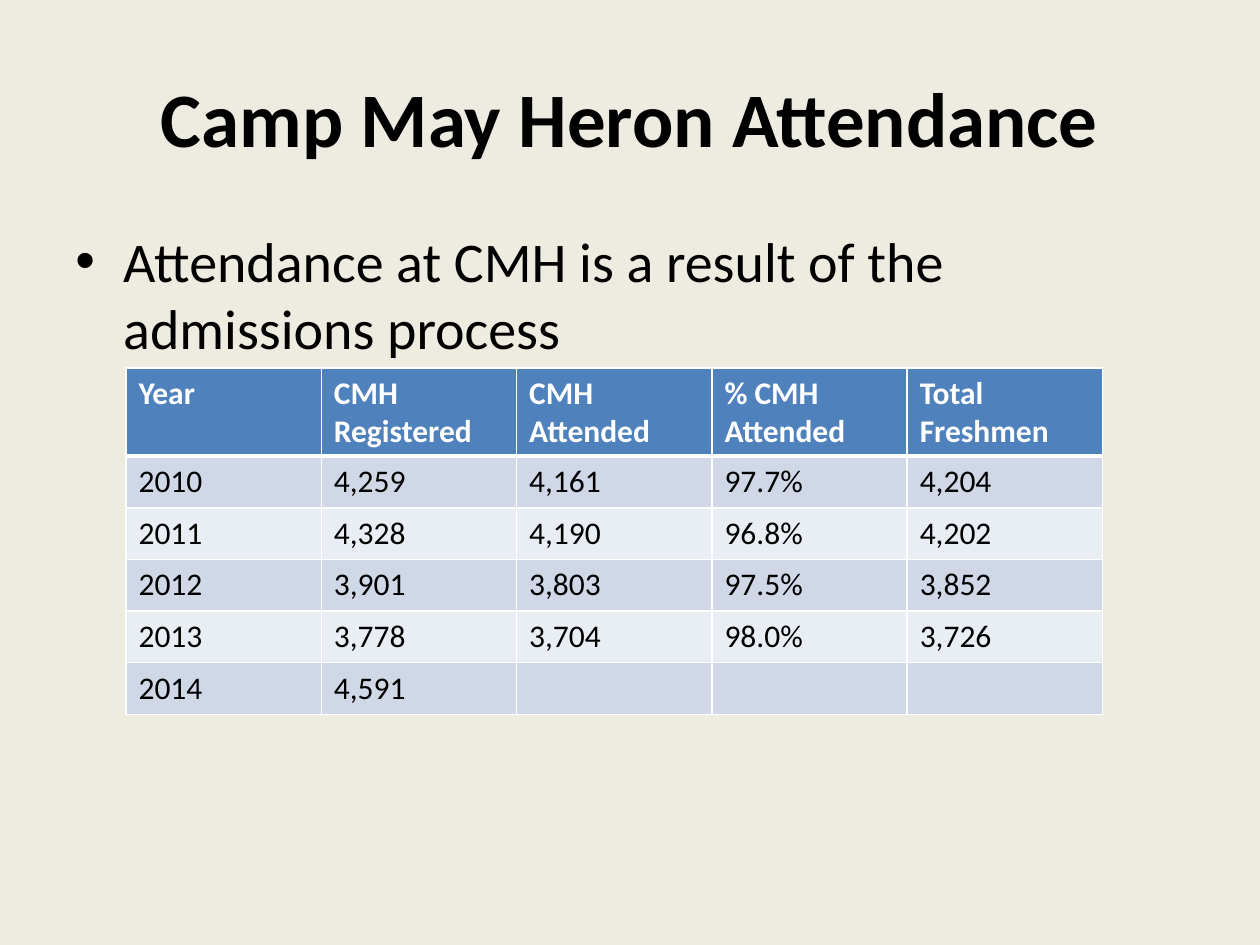
from pptx import Presentation
from pptx.dml.color import RGBColor as Rgb
from pptx.enum.text import MSO_ANCHOR as Anchor, PP_ALIGN as Align
from pptx.oxml.ns import qn
from pptx.util import Inches, Pt
from lxml.etree import SubElement as Sub

FONT = "Calibri"
COLORS = {
    "back": "EEECE1",
    "text": "000000",
    "white": "FFFFFF",
    "head": "4F81BD",
    "odd": "D0D8E8",
    "even": "E9EDF4",
}
ROWS = [
    ["Year", "CMH Registered", "CMH Attended", "% CMH Attended", "Total Freshmen"],
    ["2010", "4,259", "4,161", "97.7%", "4,204"],
    ["2011", "4,328", "4,190", "96.8%", "4,202"],
    ["2012", "3,901", "3,803", "97.5%", "3,852"],
    ["2013", "3,778", "3,704", "98.0%", "3,726"],
    ["2014", "4,591", "", "", ""],
]


def color(name):
    return Rgb.from_string(COLORS[name])


def style(para, size, ink="text", bold=False):
    for run in para.runs:
        font = run.font
        font.name, font.size, font.bold = FONT, Pt(size), bold
        font.color.rgb = color(ink)


def add_text(slide, box, text, size, bold=False):
    frame = slide.shapes.add_textbox(*map(Inches, box)).text_frame
    frame.word_wrap = True
    frame.text = text
    style(frame.paragraphs[0], size, bold=bold)
    return frame


def add_title(slide, box, text):
    frame = add_text(slide, box, text, 44, bold=True)
    frame.vertical_anchor = Anchor.MIDDLE
    frame.paragraphs[0].alignment = Align.CENTER


def add_bullet(slide, box, text):
    para = add_text(slide, box, text, 32).paragraphs[0]
    para.space_before = Pt(6.4)
    props = para._p.get_or_add_pPr()
    indent = Inches(0.38)
    props.set("marL", str(indent))
    props.set("indent", str(-indent))
    Sub(props, qn("a:buFont"), typeface="Arial")
    Sub(props, qn("a:buChar"), char="•")


def add_border(cell, side, width):
    line = Sub(cell._tc.get_or_add_tcPr(), qn(f"a:ln{side}"), w=str(Pt(width)))
    fill = Sub(line, qn("a:solidFill"))
    Sub(fill, qn("a:srgbClr"), val=COLORS["white"])


def add_grid(slide, box, rows):
    left, top, width, height = map(Inches, box)
    table = slide.shapes.add_table(
        len(rows), len(rows[0]), left, top, width, height).table
    for r, row in enumerate(rows):
        head = r == 0
        shade = "head" if head else "odd" if r % 2 else "even"
        # The rule below the header is thicker than the others
        edges = {"L": 1, "R": 1, "T": 3 if r == 1 else 1, "B": 3 if head else 1}
        for c, text in enumerate(row):
            cell = table.cell(r, c)
            cell.text = text
            style(cell.text_frame.paragraphs[0], 18,
                  "white" if head else "text", head)
            for side, weight in edges.items():
                add_border(cell, side, weight)
            cell.fill.solid()
            cell.fill.fore_color.rgb = color(shade)


def main():
    deck = Presentation()
    deck.slide_width, deck.slide_height = Inches(10), Inches(7.5)
    slide = deck.slides.add_slide(deck.slide_layouts[6])
    slide.background.fill.solid()
    slide.background.fill.fore_color.rgb = color("back")

    add_title(slide, (0.5, 0.3, 9, 1.25), "Camp May Heron Attendance")
    add_bullet(slide, (0.5, 1.75, 9, 4.95),
               "Attendance at CMH is a result of the admissions process")
    add_grid(slide, (1, 2.92, 7.75, 0.41 * len(ROWS)), ROWS)
    deck.save("out.pptx")


if __name__ == "__main__":
    main()
